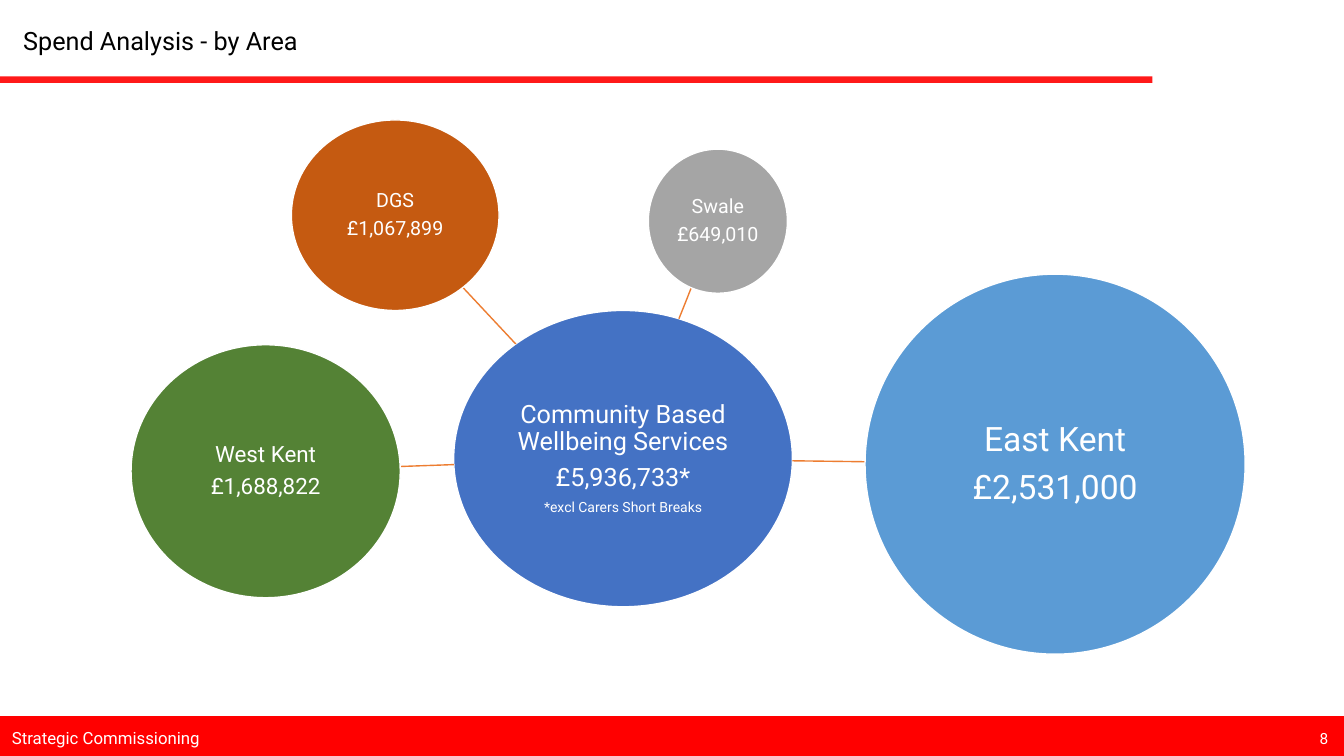
import math
import pptx
import pptx.dml.color
import pptx.enum.shapes
import pptx.enum.text
import pptx.oxml.ns
import pptx.util
from lxml import etree

Inches = pptx.util.Inches
Pt = pptx.util.Pt
RGBColor = pptx.dml.color.RGBColor
Align = pptx.enum.text.PP_ALIGN
Anchor = pptx.enum.text.MSO_ANCHOR
ShapeType = pptx.enum.shapes.MSO_SHAPE
qn = pptx.oxml.ns.qn

BLACK = RGBColor(0, 0, 0)
WHITE = RGBColor(255, 255, 255)
RED = RGBColor(255, 0, 0)
BLUE = RGBColor(0x44, 0x72, 0xC4)
RUST = RGBColor(0xC5, 0x5A, 0x11)
GREY = RGBColor(0xA5, 0xA5, 0xA5)
GREEN = RGBColor(0x54, 0x82, 0x35)
SKY = RGBColor(0x5B, 0x9B, 0xD5)
ORANGE = RGBColor(0xED, 0x7D, 0x31)

FONT = "Roboto"
TITLE = "Spend Analysis - by Area"
FOOTER = "Strategic Commissioning"
PAGE = "8"

HUB = {
    "box": (4.5, 3.08, 3.36, 2.94), "color": BLUE, "inset": 0.01,
    "lines": [("Community Based Wellbeing Services", 18),
              ("£5,936,733*", 18), ("*excl Carers Short Breaks", 10)],
}
AREAS = [
    {"box": (2.89, 1.19, 2.06, 1.89), "color": RUST, "inset": 0.01,
     "lines": [("DGS", 14), ("£1,067,899", 14)]},
    {"box": (6.43, 1.48, 1.38, 1.43), "color": GREY, "inset": 0.01,
     "lines": [("Swale", 14), ("£649,010", 14)]},
    {"box": (1.3, 3.42, 2.67, 2.51), "color": GREEN, "inset": 0.01,
     "lines": [("West Kent", 16), ("£1,688,822", 16)]},
    {"box": (8.58, 2.72, 3.77, 3.77), "color": SKY, "inset": 0.02,
     "lines": [("East Kent", 24), ("£2,531,000", 24)]},
]


def apply(target, values):
    for name, value in values.items():
        setattr(target, name, value)


def style_text(paragraph, text, size, color):
    paragraph.text = text
    apply(paragraph.font, {"name": FONT, "size": Pt(size), "bold": False})
    paragraph.font.color.rgb = color


def add_label(slide, text, box, size, anchor):
    shape = slide.shapes.add_textbox(*map(Inches, box))
    apply(shape.text_frame, {"word_wrap": True, "vertical_anchor": anchor})
    style_text(shape.text_frame.paragraphs[0], text, size, WHITE)


def add_filled(slide, kind, box, fill, line):
    shape = slide.shapes.add_shape(kind, *map(Inches, box))
    shape.shadow.inherit = False
    shape.fill.solid()
    shape.fill.fore_color.rgb = fill
    shape.line.color.rgb = line
    shape.line.width = Pt(1)
    return shape


def add_line(slide, start, end, color, width):
    connector = slide.shapes.add_connector(
        pptx.enum.shapes.MSO_CONNECTOR.STRAIGHT, *map(Inches, (*start, *end)))
    connector.line.color.rgb = color
    connector.line.width = Pt(width)
    etree.SubElement(connector._element.spPr, qn("a:effectLst"))
    return connector


def add_bubble(slide, bubble):
    shape = add_filled(slide, ShapeType.OVAL, bubble["box"], bubble["color"], WHITE)
    frame = shape.text_frame
    inset = Inches(bubble["inset"])
    apply(frame, {"word_wrap": True, "vertical_anchor": Anchor.MIDDLE,
                  "margin_left": inset, "margin_right": inset,
                  "margin_top": inset, "margin_bottom": inset})
    for index, (text, size) in enumerate(bubble["lines"]):
        paragraph = frame.add_paragraph() if index else frame.paragraphs[0]
        style_text(paragraph, text, size, WHITE)
        apply(paragraph, {"alignment": Align.CENTER, "line_spacing": 0.9,
                          "space_after": Pt(0.35 * size)})


def center(box):
    left, top, width, height = box
    return left + width / 2, top + height / 2


def edge_toward(box, target):
    x, y = center(box)
    dx, dy = target[0] - x, target[1] - y
    scale = 1 / math.hypot(dx / (box[2] / 2), dy / (box[3] / 2))
    return x + dx * scale, y + dy * scale


def main():
    presentation = pptx.Presentation()
    presentation.slide_width = Inches(13.33)
    presentation.slide_height = Inches(7.5)
    slide = presentation.slides.add_slide(presentation.slide_layouts[5])

    add_filled(slide, ShapeType.RECTANGLE, (0, 7.11, 13.33, 0.39), RED, RED)
    rule = add_line(slide, (0, 0.79), (11.43, 0.79), RED, 4.5)
    rule_color = rule._element.spPr.find(".//" + qn("a:srgbClr"))
    etree.SubElement(rule_color, qn("a:alpha"), val="90000")
    add_label(slide, FOOTER, (0.02, 7.12, 2.33, 0.4), 12, Anchor.MIDDLE)
    add_label(slide, PAGE, (12.99, 7.18, 0.34, 0.29), 11, Anchor.TOP)

    title = slide.shapes.title
    apply(title, {"left": Inches(0.13), "top": Inches(0.2),
                  "width": Inches(3.16), "height": Inches(0.4)})
    apply(title.text_frame, {"word_wrap": True, "vertical_anchor": Anchor.TOP,
                             "auto_size": pptx.enum.text.MSO_AUTO_SIZE.NONE})
    style_text(title.text_frame.paragraphs[0], TITLE, 18, BLACK)
    title.text_frame.paragraphs[0].alignment = Align.LEFT

    add_bubble(slide, HUB)
    for area in AREAS:
        add_line(slide, edge_toward(HUB["box"], center(area["box"])),
                 edge_toward(area["box"], center(HUB["box"])), ORANGE, 1)
        add_bubble(slide, area)

    presentation.save("out.pptx")


if __name__ == "__main__":
    main()
